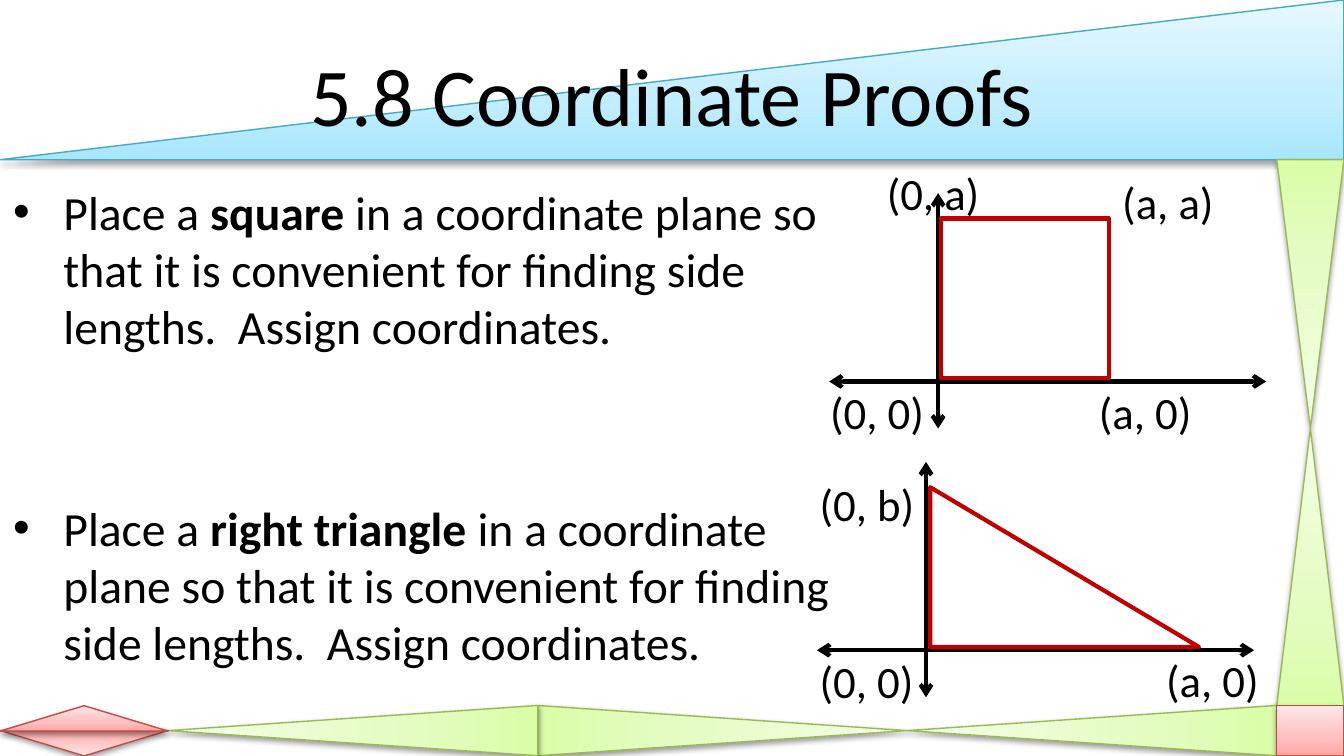
"""Builds the slide on coordinate proofs for a square and a right triangle."""
from copy import deepcopy
from dataclasses import dataclass

from lxml.etree import SubElement
from pptx import Presentation
from pptx.dml.color import RGBColor as Rgb
from pptx.enum.shapes import MSO_CONNECTOR as Link, MSO_SHAPE as Shape
from pptx.enum.text import MSO_ANCHOR as Anchor, MSO_AUTO_SIZE as AutoSize, PP_ALIGN as Align
from pptx.oxml.ns import qn
from pptx.util import Cm, Pt


@dataclass(frozen=True)
class Theme:
    """Colours and type sizes; a tint is three gradient stops and an outline."""
    font: str = "Calibri"
    ink: str = "000000"
    paper: str = "FFFFFF"
    figure: str = "C00000"
    blue: tuple = ("A7E6FF", "C1EDFF", "E7F8FF", "46AAC5")
    green: tuple = ("DAFDA7", "E4FCC2", "F5FFE7", "98B955")
    red: tuple = ("FFA6A5", "FFC0BF", "FFE7E7", "BF4C48")
    stops: tuple = (0, 0.35, 1)
    title_size: float = 44
    body_size: float = 25.5
    label_size: float = 24
    heavy: float = 2.25
    fine: float = 0.75


def add_text(paragraph, text, *, font, size, color, bold=False):
    """Add a formatted run to a paragraph."""
    run = paragraph.add_run()
    run.text = text
    run.font.name, run.font.size, run.font.bold = font, Pt(size), bold
    run.font.color.rgb = Rgb.from_string(color)


class ProofSlide:
    """Holds the theme and the current slide and draws each kind of element."""

    def __init__(self, slide, theme):
        self.slide, self.theme = slide, theme

    def typeset(self, paragraph, text, size, bold=False):
        """Add a run in the theme's font and ink."""
        add_text(paragraph, text, font=self.theme.font, size=size, color=self.theme.ink, bold=bold)

    def outline(self, line, color, width):
        """Set the colour and weight of a line."""
        line.color.rgb, line.width = Rgb.from_string(color), Pt(width)

    def place(self, kind, box):
        """Add a preset shape without a shadow."""
        shape = self.slide.shapes.add_shape(kind, *map(Cm, box))
        shape.shadow.inherit = False
        return shape

    def ornament(self, kind, box, tint, rotation=0, flip=None):
        """Draw a shaded piece of the border."""
        piece = self.place(kind, box)
        piece.rotation = rotation
        properties = piece._element.spPr
        if flip:
            properties.find(qn("a:xfrm")).set(flip, "1")
        piece.fill.gradient()
        piece.fill.gradient_angle = 90
        stop_list = properties.find(qn("a:gradFill")).find(qn("a:gsLst"))
        stop_list.insert(1, deepcopy(stop_list[0]))
        for stop, position, color in zip(piece.fill.gradient_stops, self.theme.stops, tint):
            stop.position, stop.color.rgb = position, Rgb.from_string(color)
        self.outline(piece.line, tint[-1], self.theme.fine)
        shadow = SubElement(properties.find(qn("a:effectLst")), qn("a:outerShdw"), blurRad="40000",
                            dist="20000", dir="5400000", rotWithShape="0")
        black = SubElement(shadow, qn("a:srgbClr"), val=self.theme.ink)
        SubElement(black, qn("a:alpha"), val="38000")

    def title(self, text, box):
        """Place the title above the border pieces."""
        title = self.slide.shapes.title
        title.left, title.top, title.width, title.height = map(Cm, box)
        title.text_frame.vertical_anchor = Anchor.MIDDLE
        paragraph = title.text_frame.paragraphs[0]
        paragraph.alignment = Align.CENTER
        self.typeset(paragraph, text, self.theme.title_size)
        self.slide.shapes._spTree.append(title._element)

    def text_frame(self, box):
        """Add a wrapping text box and return its frame."""
        frame = self.slide.shapes.add_textbox(*map(Cm, box)).text_frame
        frame.word_wrap = True
        return frame

    def tasks(self, tasks, box):
        """Set bulleted tasks, each with its space before and its figure in bold."""
        frame = self.text_frame(box)
        for index, (space, figure, rest) in enumerate(tasks):
            paragraph = frame.add_paragraph() if index else frame.paragraphs[0]
            paragraph.space_before = Pt(space)
            properties = paragraph._p.get_or_add_pPr()
            properties.set("marL", str(Cm(0.95)))
            properties.set("indent", str(-Cm(0.95)))
            SubElement(properties, qn("a:buFont"), typeface="Arial")
            SubElement(properties, qn("a:buChar"), char="•")
            for text, bold in (("Place a ", False), (figure, True), (rest, False)):
                self.typeset(paragraph, text, self.theme.body_size, bold)

    def axes(self, left, top):
        """Draw a grouped pair of double-headed axes."""
        group = self.slide.shapes.add_group_shape()
        origin_x, origin_y = left + 2.06, top + 3.56
        for ends in ((left, origin_y, left + 8.26, origin_y),
                     (origin_x, top + 4.45, origin_x, top)):
            axis = group.shapes.add_connector(Link.STRAIGHT, *map(Cm, ends))
            self.outline(axis.line, self.theme.ink, self.theme.heavy)
            line_properties = axis._element.spPr.find(qn("a:ln"))
            for tip in ("a:headEnd", "a:tailEnd"):
                SubElement(line_properties, qn(tip), type="arrow")
            SubElement(axis._element.spPr, qn("a:effectLst"))

    def figure(self, kind, box):
        """Draw an outlined geometric figure."""
        figure = self.place(kind, box)
        figure.fill.solid()
        figure.fill.fore_color.rgb = Rgb.from_string(self.theme.paper)
        self.outline(figure.line, self.theme.figure, self.theme.heavy)

    def label(self, text, left, top):
        """Set the coordinates of a vertex."""
        frame = self.text_frame((left, top, 2.34, 1.28))
        frame.auto_size = AutoSize.SHAPE_TO_FIT_TEXT
        self.typeset(frame.paragraphs[0], text, self.theme.label_size)


def draw_border(page):
    """Draw the header wedge, the side and bottom bands and the corners."""
    theme, triangle = page.theme, Shape.ISOSCELES_TRIANGLE
    page.ornament(Shape.RIGHT_TRIANGLE, (0, 0, 25.4, 3.02), theme.blue, flip="flipH")
    page.ornament(triangle, (24.13, 3.02, 1.27, 5.08), theme.green, flip="flipV")
    page.ornament(triangle, (24.13, 8.1, 1.27, 5.24), theme.green)
    for step, rotation in enumerate((270, 90, 270)):
        page.ornament(triangle, (20.16 - 6.98 * step, 10.32, 0.95, 6.98), theme.green,
                      rotation, "flipH" if rotation == 90 else None)
    page.ornament(Shape.RECTANGLE, (24.13, 13.34, 1.27, 0.95), theme.red)
    page.ornament(triangle, (0, 13.81, 3.18, 0.48), theme.red, flip="flipV")
    page.ornament(triangle, (0, 13.34, 3.18, 0.48), theme.red)


def main():
    """Build and save the slide."""
    deck = Presentation()
    deck.slide_width, deck.slide_height = Cm(25.4), Cm(14.29)
    page = ProofSlide(deck.slides.add_slide(deck.slide_layouts[5]), Theme())
    draw_border(page)
    page.title("5.8 Coordinate Proofs", (0, 0.58, 25.4, 2.38))
    goal = "in a coordinate plane so that it is convenient for finding side lengths.  Assign coordinates."
    page.tasks(((2, "square", " " + goal), (77.5, "right triangle ", goal)), (0, 3.33, 16.28, 9.37))

    diagrams = (
        ((15.67, 3.65), Shape.RECTANGLE, (17.78, 4.13, 3.18, 3.02),
         (("(0, 0)", 15.44, 7.14), ("(0, a)", 16.51, 3), ("(a, 0)", 20.52, 7.14), ("(a, a)", 20.96, 3.18))),
        ((15.44, 8.73), Shape.RIGHT_TRIANGLE, (17.58, 9.21, 5.08, 3.02),
         (("(0, 0)", 15.24, 12.24), ("(0, b)", 15.24, 8.89), ("(a, 0)", 21.79, 12.22))),
    )
    for corner, kind, box, vertices in diagrams:
        page.axes(*corner)
        page.figure(kind, box)
        for vertex in vertices:
            page.label(*vertex)
    deck.save("out.pptx")


if __name__ == "__main__":
    main()
